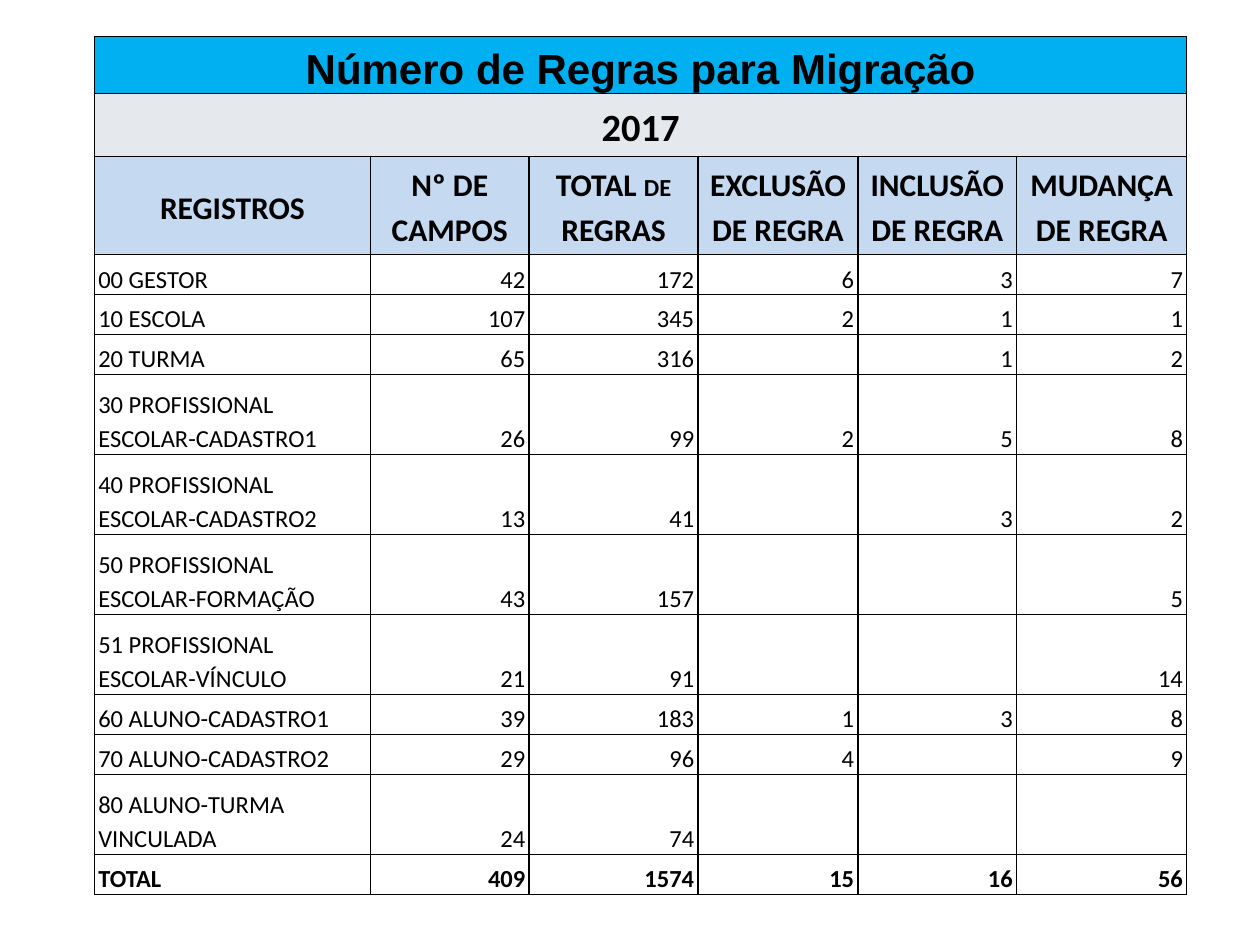
from dataclasses import dataclass
from typing import Optional

from lxml.etree import SubElement
from pptx import Presentation
from pptx.dml.color import RGBColor
from pptx.enum.text import MSO_ANCHOR as Anchor, PP_ALIGN as Align
from pptx.oxml.ns import qn
from pptx.table import Table, _Cell as Cell
from pptx.util import Pt

BLACK = "000000"
COLUMN_WIDTHS = (157.7, 90.7, 96.5, 91.4, 90.7, 97.2)
SINGLE_ROW, DOUBLE_ROW = 22.86, 45.72
CELL_FORMAT = {
    "margin_left": Pt(2.2),
    "margin_right": Pt(2.2),
    "margin_top": Pt(0),
    "margin_bottom": Pt(0),
}


@dataclass(frozen=True)
class Style:
    fill: str
    size: float
    bold: bool
    align: Align
    anchor: Anchor
    font: str = "Calibri"


@dataclass(frozen=True)
class Registro:
    name: str
    counts: tuple[Optional[int], ...]
    height: float = SINGLE_ROW


TITLE = Style("00B0F0", 24, True, Align.CENTER, Anchor.BOTTOM, "Arial")
YEAR = Style("E5E9EE", 22, True, Align.CENTER, Anchor.MIDDLE)
HEADING = Style("C5D9F1", 18, True, Align.CENTER, Anchor.MIDDLE)
NAME = Style("FFFFFF", 14, False, Align.LEFT, Anchor.BOTTOM)
COUNT = Style("FFFFFF", 14, False, Align.RIGHT, Anchor.BOTTOM)
TOTAL_NAME = Style("FFFFFF", 14, True, Align.LEFT, Anchor.BOTTOM)
TOTAL_COUNT = Style("FFFFFF", 14, True, Align.RIGHT, Anchor.BOTTOM)

HEADINGS = (
    ("REGISTROS",),
    ("Nº DE CAMPOS",),
    ("TOTAL ", ("DE", 14), " REGRAS"),
    ("EXCLUSÃO DE REGRA",),
    ("INCLUSÃO DE REGRA",),
    ("MUDANÇA DE REGRA",),
)
REGISTROS = (
    Registro("00 GESTOR", (42, 172, 6, 3, 7)),
    Registro("10 ESCOLA", (107, 345, 2, 1, 1)),
    Registro("20 TURMA", (65, 316, None, 1, 2)),
    Registro("30 PROFISSIONAL ESCOLAR-CADASTRO1", (26, 99, 2, 5, 8), DOUBLE_ROW),
    Registro("40 PROFISSIONAL ESCOLAR-CADASTRO2", (13, 41, None, 3, 2), DOUBLE_ROW),
    Registro("50 PROFISSIONAL ESCOLAR-FORMAÇÃO", (43, 157, None, None, 5), DOUBLE_ROW),
    Registro("51 PROFISSIONAL ESCOLAR-VÍNCULO", (21, 91, None, None, 14), DOUBLE_ROW),
    Registro("60 ALUNO-CADASTRO1", (39, 183, 1, 3, 8)),
    Registro("70 ALUNO-CADASTRO2", (29, 96, 4, None, 9)),
    Registro("80 ALUNO-TURMA VINCULADA", (24, 74, None, None, None), DOUBLE_ROW),
)


def color(value: str) -> RGBColor:
    return RGBColor.from_string(value)


def apply_format(target: object, values: dict) -> None:
    for attribute, value in values.items():
        setattr(target, attribute, value)


def draw_borders(cell: Cell) -> None:
    properties = cell._tc.get_or_add_tcPr()
    for side in ("lnL", "lnR", "lnT", "lnB"):
        border = SubElement(properties, qn(f"a:{side}"), w=str(Pt(1)))
        SubElement(SubElement(border, qn("a:solidFill")), qn("a:srgbClr"), val=BLACK)


def fill_cell(cell: Cell, style: Style, *pieces: str | tuple[str, float]) -> None:
    apply_format(cell, CELL_FORMAT | {"vertical_anchor": style.anchor})
    draw_borders(cell)
    cell.fill.solid()
    cell.fill.fore_color.rgb = color(style.fill)
    if not pieces:
        return
    paragraph = cell.text_frame.paragraphs[0]
    apply_format(paragraph, {"alignment": style.align, "line_spacing": 1.15})
    for piece in pieces:
        text, size = piece if isinstance(piece, tuple) else (piece, style.size)
        run = paragraph.add_run()
        run.text = text
        apply_format(run.font, {"name": style.font, "size": Pt(size), "bold": style.bold})
        run.font.color.rgb = color(BLACK)


def draw_banner(table: Table, row: int, text: str, style: Style) -> None:
    last = len(COLUMN_WIDTHS) - 1
    table.cell(row, 0).merge(table.cell(row, last))
    fill_cell(table.cell(row, 0), style, text)
    for column in range(1, last + 1):
        fill_cell(table.cell(row, column), style)


def draw_registro(table: Table, row: int, registro: Registro,
                  name_style: Style, count_style: Style) -> None:
    fill_cell(table.cell(row, 0), name_style, registro.name)
    for column, count in enumerate(registro.counts, 1):
        shown = () if count is None else (str(count),)
        fill_cell(table.cell(row, column), count_style, *shown)


def main() -> None:
    presentation = Presentation()
    apply_format(presentation, {"slide_width": Pt(720), "slide_height": Pt(540)})
    slide = presentation.slides.add_slide(presentation.slide_layouts[6])

    columns = zip(*(registro.counts for registro in REGISTROS))
    total = Registro("TOTAL", tuple(sum(filter(None, column)) for column in columns))
    heights = [32.4, 36, 56.16, *(registro.height for registro in REGISTROS), total.height]

    table = slide.shapes.add_table(
        len(heights), len(COLUMN_WIDTHS), Pt(54), Pt(20.9),
        Pt(sum(COLUMN_WIDTHS)), Pt(sum(heights)),
    ).table
    apply_format(table, {"first_row": False, "horz_banding": False})
    for column, width in zip(table.columns, COLUMN_WIDTHS):
        column.width = Pt(width)
    for row, height in zip(table.rows, heights):
        row.height = Pt(height)

    draw_banner(table, 0, "Número de Regras para Migração", TITLE)
    draw_banner(table, 1, "2017", YEAR)
    for column, heading in enumerate(HEADINGS):
        fill_cell(table.cell(2, column), HEADING, *heading)
    for row, registro in enumerate(REGISTROS, 3):
        draw_registro(table, row, registro, NAME, COUNT)
    draw_registro(table, len(heights) - 1, total, TOTAL_NAME, TOTAL_COUNT)

    presentation.save("out.pptx")


if __name__ == "__main__":
    main()
